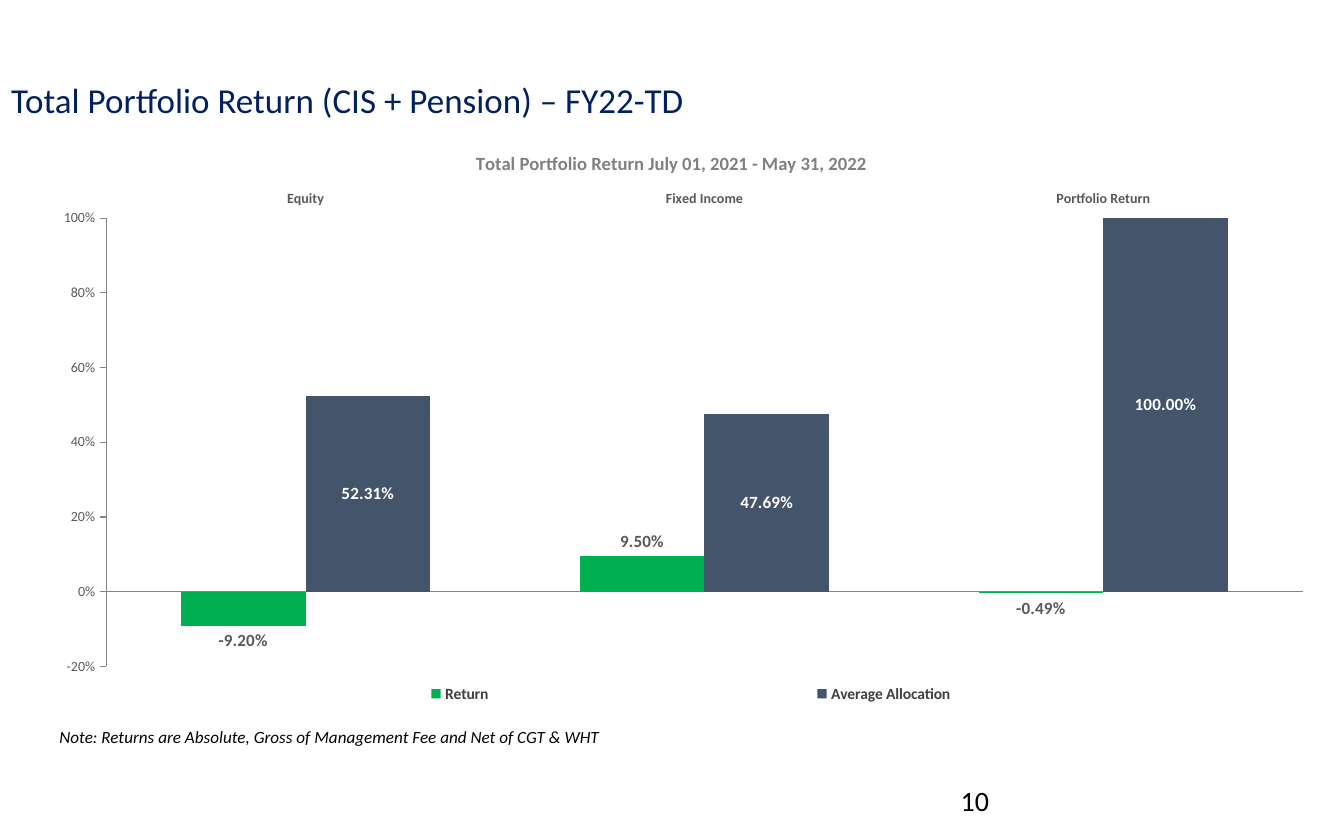
import pptx
import pptx.chart.data
import pptx.dml.color
import pptx.enum.chart
import pptx.enum.text
import pptx.oxml
import pptx.oxml.ns
import pptx.util

TITLE = "Total Portfolio Return (CIS + Pension) – FY22-TD"
CHART_TITLE = "Total Portfolio Return July 01, 2021 - May 31, 2022"
NOTE = "Note: Returns are Absolute, Gross of Management Fee and Net of CGT & WHT"
PAGE_NUMBER = "10"
CATEGORIES = ["Equity", "Fixed Income", "Portfolio Return"]
LABEL = pptx.enum.chart.XL_LABEL_POSITION
SERIES = [
    {"name": "Return", "values": [-0.092, 0.095, -0.0049], "fill": "00B050",
     "label": "595959", "position": LABEL.OUTSIDE_END},
    {"name": "Average Allocation", "values": [0.5231, 0.4769, 1], "fill": "44546A",
     "label": "FFFFFF", "position": LABEL.CENTER},
]
PLOT_AREA = (0.063, 0.149, 0.925, 0.755)
LEGEND_AREA = (0.064, 0.92, 0.902, 0.06)
Inches = pptx.util.Inches


def color(value):
    """Turn a hex string into a colour."""
    return pptx.dml.color.RGBColor.from_string(value)


def style(font, size, shade, name="Calibri", bold=False, italic=False):
    """Set the look of a font."""
    font.name, font.size = name, pptx.util.Pt(size)
    font.bold, font.italic = bold, italic
    font.color.rgb = color(shade)


def write(frame, text, margins=(0.1, 0.05), anchor="TOP", **look):
    """Put one formatted line into a text frame or table cell."""
    frame.margin_left = frame.margin_right = Inches(margins[0])
    frame.margin_top = frame.margin_bottom = Inches(margins[1])
    frame.vertical_anchor = getattr(pptx.enum.text.MSO_ANCHOR, anchor)
    paragraph = getattr(frame, "text_frame", frame).paragraphs[0]
    paragraph.alignment = pptx.enum.text.PP_ALIGN.LEFT
    span = paragraph.add_run()
    span.text = text
    style(span.font, **look)


def set_layout(parent, area, before, inner=False):
    """Place a chart part by fractions of the chart area."""
    for old in parent.findall(pptx.oxml.ns.qn("c:layout")):
        parent.remove(old)
    target = '<c:layoutTarget val="inner"/>' if inner else ""
    modes = "".join(f'<c:{side}Mode val="edge"/>' for side in "xy")
    sizes = "".join(f'<c:{side} val="{value}"/>' for side, value in zip("xywh", area))
    layout = pptx.oxml.parse_xml(
        f'<c:layout {pptx.oxml.ns.nsdecls("c")}><c:manualLayout>'
        f"{target}{modes}{sizes}</c:manualLayout></c:layout>")
    following = parent.find(pptx.oxml.ns.qn(before)) if before else None
    parent.insert(0 if following is None else parent.index(following), layout)


def add_returns_chart(page):
    """Add the clustered columns of return and allocation."""
    data = pptx.chart.data.CategoryChartData(number_format="0.00%")
    data.categories = CATEGORIES
    for entry in SERIES:
        data.add_series(entry["name"], entry["values"])
    chart = page.shapes.add_chart(
        pptx.enum.chart.XL_CHART_TYPE.COLUMN_CLUSTERED,
        Inches(0.22), Inches(1.16), Inches(11.55), Inches(5.3), data).chart
    style(chart.font, 10, "000000", name="Manrope")

    chart.has_title = True
    heading = chart.chart_title.text_frame.paragraphs[0].add_run()
    heading.text = CHART_TITLE
    style(heading.font, 12, "808080", bold=True)
    chart.chart_title.include_in_layout = False

    plot = chart.plots[0]
    plot.gap_width, plot.overlap, plot.vary_by_categories = 120, 0, False
    for series, entry in zip(plot.series, SERIES):
        series.invert_if_negative = False
        series.format.fill.solid()
        series.format.fill.fore_color.rgb = color(entry["fill"])
        labels = series.data_labels
        labels.show_value = True
        labels.number_format, labels.number_format_is_linked = "0.00%", False
        labels.position = entry["position"]
        style(labels.font, 11, entry["label"], bold=True)

    tick = pptx.enum.chart.XL_TICK_MARK
    category, value = chart.category_axis, chart.value_axis
    category.tick_label_position = pptx.enum.chart.XL_TICK_LABEL_POSITION.HIGH
    value.minimum_scale, value.maximum_scale, value.major_unit = -0.2, 1, 0.2
    value.tick_labels.number_format = "0%"
    value.tick_labels.number_format_is_linked = False
    for axis, mark, bold in ((category, tick.NONE, True), (value, tick.OUTSIDE, False)):
        axis.has_major_gridlines = False
        axis.major_tick_mark, axis.minor_tick_mark = mark, tick.NONE
        axis.format.line.color.rgb = color("868686")
        axis.format.line.width = pptx.util.Pt(0.75)
        style(axis.tick_labels.font, 9, "595959", bold=bold)

    chart.has_legend = True
    legend = chart.legend
    legend.position = pptx.enum.chart.XL_LEGEND_POSITION.BOTTOM
    legend.include_in_layout = False
    style(legend.font, 10, "404040", bold=True)
    set_layout(legend._element, LEGEND_AREA, "c:overlay")
    set_layout(plot._element.getparent(), PLOT_AREA, None, inner=True)


def main():
    """Build the slide and save it."""
    deck = pptx.Presentation()
    deck.slide_width, deck.slide_height = Inches(12), Inches(7.5)
    page = deck.slides.add_slide(deck.slide_layouts[5])

    title = page.shapes.title
    title.left, title.top = Inches(0.01), Inches(0.62)
    title.width, title.height = Inches(9), Inches(0.54)
    write(title.text_frame, TITLE, margins=(0.09, 0.04), anchor="MIDDLE",
          size=22.5, shade="002060")

    add_returns_chart(page)

    table = page.shapes.add_table(
        1, 1, Inches(0.53), Inches(6.45), Inches(4.88), Inches(0.23)).table
    table.first_row = table.horz_banding = False
    cell = table.cell(0, 0)
    cell.fill.background()
    write(cell, NOTE, margins=(0, 0), anchor="BOTTOM", size=11, shade="000000", italic=True)

    number = page.shapes.add_textbox(Inches(8.48), Inches(6.95), Inches(2.7), Inches(0.4))
    number.text_frame.word_wrap = True
    write(number.text_frame, PAGE_NUMBER, size=18, shade="000000")

    deck.save("out.pptx")


if __name__ == "__main__":
    main()
